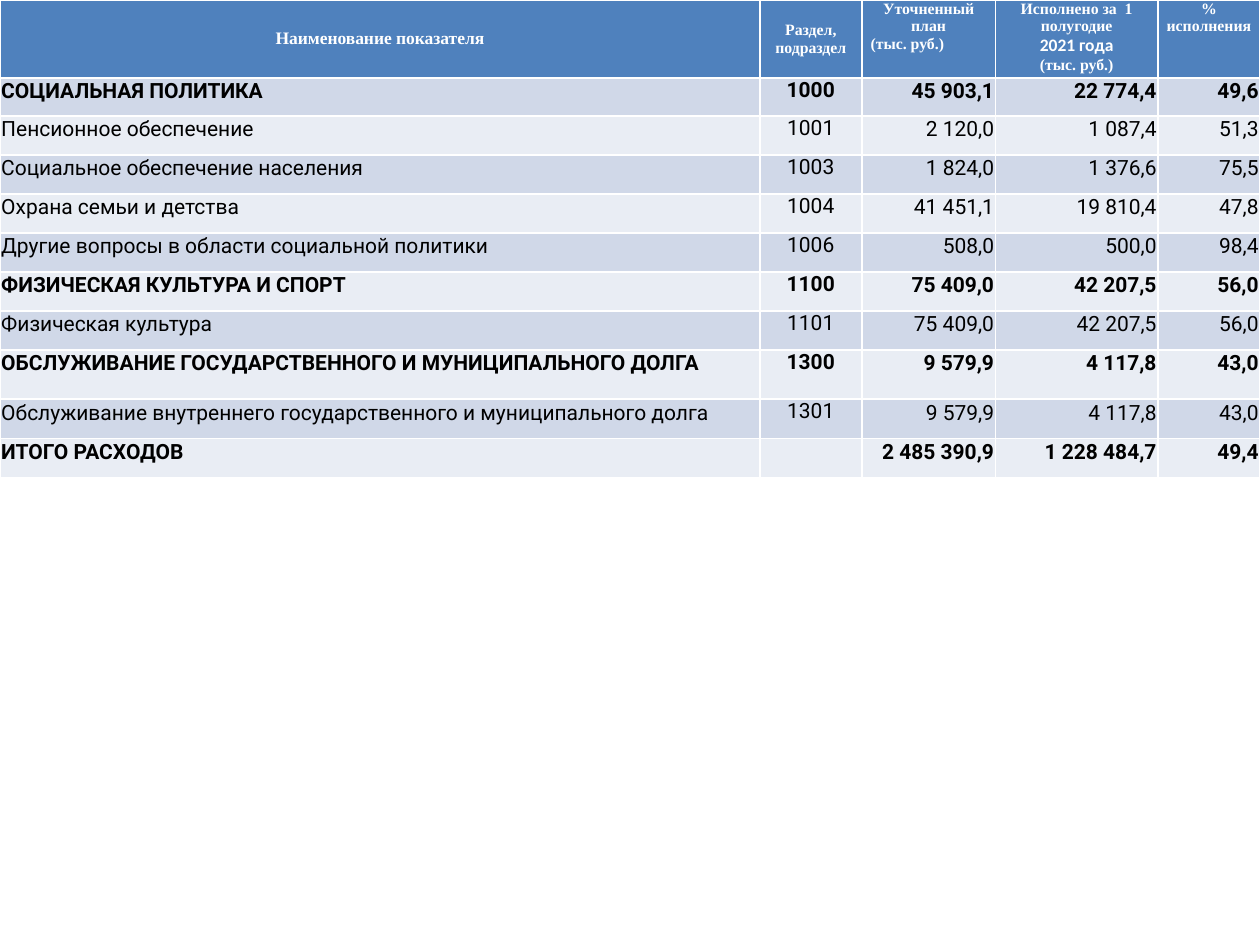
from pptx import Presentation
from pptx.dml.color import RGBColor
from pptx.enum.text import MSO_ANCHOR, PP_ALIGN
from pptx.util import Inches, Pt

LEFT, CENTER, RIGHT = PP_ALIGN.LEFT, PP_ALIGN.CENTER, PP_ALIGN.RIGHT
SERIF = "Times New Roman"
COLUMN_WIDTHS = [6.03, 0.81, 1.06, 1.29, 0.81]
ROW_HEIGHTS = [0.62, 0.3] + [0.31] * 6 + [0.39] + [0.31] * 2
HEADER_FILL, BAND_FILLS = "4F81BD", ["D0D8E8", "E9EDF4"]

HEADERS = [
    [("Наименование показателя", 10, SERIF, CENTER)],
    [("Раздел, подраздел", 9, SERIF, CENTER)],
    [("Уточненный план", 9, SERIF, CENTER), ("(тыс. руб.)", 9, SERIF, LEFT)],
    [("Исполнено за  1 полугодие", 9, SERIF, CENTER),
     ("2021 года", 10, "Calibri", CENTER),
     ("(тыс. руб.)", 9, SERIF, CENTER)],
    [("% исполнения", 9, SERIF, CENTER)],
]
EXPENSES = [
    ("СОЦИАЛЬНАЯ ПОЛИТИКА", "1000", "45 903,1", "22 774,4", "49,6"),
    ("Пенсионное обеспечение", "1001", "2 120,0", "1 087,4", "51,3"),
    ("Социальное обеспечение населения", "1003", "1 824,0", "1 376,6", "75,5"),
    ("Охрана семьи и детства", "1004", "41 451,1", "19 810,4", "47,8"),
    ("Другие вопросы в области социальной политики", "1006", "508,0", "500,0", "98,4"),
    ("ФИЗИЧЕСКАЯ КУЛЬТУРА И СПОРТ", "1100", "75 409,0", "42 207,5", "56,0"),
    ("Физическая культура", "1101", "75 409,0", "42 207,5", "56,0"),
    ("ОБСЛУЖИВАНИЕ ГОСУДАРСТВЕННОГО И МУНИЦИПАЛЬНОГО ДОЛГА", "1300",
     "9 579,9", "4 117,8", "43,0"),
    ("Обслуживание внутреннего государственного и муниципального долга", "1301",
     "9 579,9", "4 117,8", "43,0"),
    ("ИТОГО РАСХОДОВ", "", "2 485 390,9", "1 228 484,7", "49,4"),
]


def color(hex_code):
    """Turn a hex string into a colour."""
    return RGBColor.from_string(hex_code)


def format_cell(cell, fill, side, top=0, anchor=MSO_ANCHOR.TOP):
    """Set the fill, margins and vertical anchor of a cell."""
    cell.fill.solid()
    cell.fill.fore_color.rgb = color(fill)
    cell.margin_left = cell.margin_right = Inches(side)
    cell.margin_top, cell.margin_bottom = Inches(top), Inches(0)
    cell.vertical_anchor = anchor


def write_lines(cell, lines, bold, text_color):
    """Write each (text, size, font, alignment) line as a paragraph."""
    frame = cell.text_frame
    for index, (text, size, font, alignment) in enumerate(lines):
        paragraph = frame.add_paragraph() if index else frame.paragraphs[0]
        paragraph.alignment = alignment
        run = paragraph.add_run()
        run.text = text
        run.font.size, run.font.name, run.font.bold = Pt(size), font, bold
        run.font.color.rgb = color(text_color)


def fill_header(table):
    """Write the header row."""
    for column, lines in enumerate(HEADERS):
        cell = table.cell(0, column)
        anchor = MSO_ANCHOR.MIDDLE if column < 2 else MSO_ANCHOR.TOP
        format_cell(cell, HEADER_FILL, 0.07, anchor=anchor)
        write_lines(cell, lines, True, "FFFFFF")


def fill_expenses(table):
    """Write the banded expense rows, with section names in bold."""
    alignments = [LEFT, CENTER, RIGHT, RIGHT, RIGHT]
    for row, expense in enumerate(EXPENSES, start=1):
        is_section = expense[0].isupper()
        for column, (text, alignment) in enumerate(zip(expense, alignments)):
            cell = table.cell(row, column)
            side, top = (0.07, 0) if column == 1 else (0.01, 0.01)
            format_cell(cell, BAND_FILLS[(row - 1) % 2], side, top)
            if text:
                write_lines(cell, [(text, 12, "Roboto", alignment)], is_section, "000000")


def add_expense_table(slide, left, top):
    """Place the expense table with its top left corner at the given point."""
    table = slide.shapes.add_table(
        len(ROW_HEIGHTS), len(COLUMN_WIDTHS), Inches(left), Inches(top),
        Inches(sum(COLUMN_WIDTHS)), Inches(sum(ROW_HEIGHTS))).table
    for column, width in zip(table.columns, COLUMN_WIDTHS):
        column.width = Inches(width)
    for row, height in zip(table.rows, ROW_HEIGHTS):
        row.height = Inches(height)
    fill_header(table)
    fill_expenses(table)


def main():
    """Build and save the presentation."""
    presentation = Presentation()
    presentation.slide_width, presentation.slide_height = Inches(10), Inches(7.5)
    slide = presentation.slides.add_slide(presentation.slide_layouts[6])
    add_expense_table(slide, 0, 0)
    presentation.save("out.pptx")


if __name__ == "__main__":
    main()
